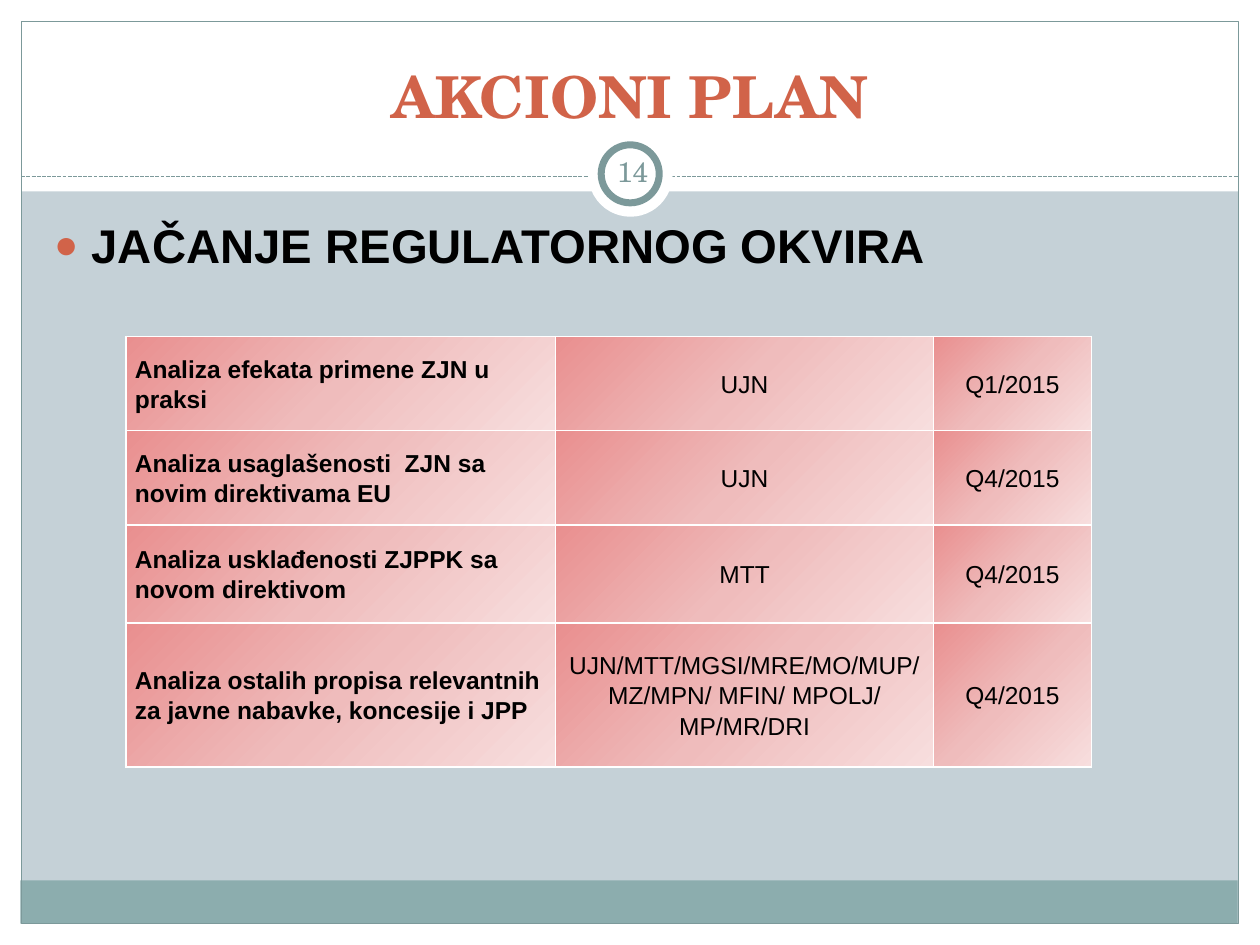
"""Build the action plan slide with its table of regulatory analyses."""
from dataclasses import dataclass

from lxml.etree import SubElement
from pptx import Presentation
from pptx.dml.color import RGBColor
from pptx.enum.dml import MSO_LINE
from pptx.enum.shapes import MSO_CONNECTOR as Connector, MSO_SHAPE as Shape
from pptx.enum.text import MSO_ANCHOR as Anchor, MSO_AUTO_SIZE as AutoSize, PP_ALIGN as Align
from pptx.oxml.ns import qn
from pptx.util import Cm, Pt

WIDTH, HEIGHT, MARGIN = 25.4, 19.05, 0.43
WHITE, BLACK, SLATE, RUST = "FFFFFF", "000000", "7C999A", "D16349"
SERIF, SANS = "TeX Gyre Schola", "Arial"
GRADIENT = ((0, "E98F8F"), (50, "EFBCBC"), (100, "F7DEDE"))
COLUMNS = (8.66, 7.62, 3.18)
ROW_HEIGHTS = (1.9, 1.9, 1.98, 2.9)


@dataclass
class Panel:
    left: float
    top: float
    width: float
    height: float
    fill: str = ""
    line: str = ""
    weight: float = 0.75
    kind: Shape = Shape.RECTANGLE


@dataclass
class Task:
    name: str
    owner: str
    deadline: str


FRAME_PANELS = (
    Panel(0, HEIGHT - MARGIN, WIDTH, MARGIN, WHITE),
    Panel(0, 0, WIDTH, 3.86, WHITE),
    Panel(0, 0, MARGIN, HEIGHT, WHITE),
    Panel(WIDTH - MARGIN, 0, MARGIN, HEIGHT, WHITE),
    Panel(0.41, 17.75, 24.54, 0.87, "8CADAE"),
    Panel(MARGIN, MARGIN, WIDTH - 2 * MARGIN, HEIGHT - 2 * MARGIN, line=SLATE),
)
BADGE_PANELS = (
    Panel(11.86, 2.67, 1.7, 1.7, WHITE, kind=Shape.OVAL),
    Panel(12.12, 2.92, 1.17, 1.17, WHITE, SLATE, 4, Shape.OVAL),
)
TASKS = (
    Task("Analiza efekata primene ZJN u praksi", "UJN", "Q1/2015"),
    Task("Analiza usaglašenosti  ZJN sa novim direktivama EU", "UJN", "Q4/2015"),
    Task("Analiza usklađenosti ZJPPK sa novom direktivom", "MTT", "Q4/2015"),
    Task("Analiza ostalih propisa relevantnih za javne nabavke, koncesije i JPP",
         "UJN/MTT/MGSI/MRE/MO/MUP/ MZ/MPN/ MFIN/ MPOLJ/ MP/MR/DRI", "Q4/2015"),
)


def color(value: str) -> RGBColor:
    """Turn a hex string into a colour."""
    return RGBColor.from_string(value)


def draw_panel(page, panel: Panel) -> None:
    """Draw one filled or outlined shape."""
    box = page.shapes.add_shape(panel.kind, Cm(panel.left), Cm(panel.top),
                                Cm(panel.width), Cm(panel.height))
    box.shadow.inherit = False
    if panel.fill:
        box.fill.solid()
        box.fill.fore_color.rgb = color(panel.fill)
    else:
        box.fill.background()
    if panel.line:
        box.line.color.rgb = color(panel.line)
        box.line.width = Pt(panel.weight)
    else:
        box.line.fill.background()


def draw_divider(page) -> None:
    """Draw the dashed line under the title."""
    divider = page.shapes.add_connector(Connector.STRAIGHT, Cm(MARGIN), Cm(3.56),
                                        Cm(WIDTH - MARGIN), Cm(3.56))
    divider.line.color.rgb = color(SLATE)
    divider.line.width = Pt(0.75)
    divider.line.dash_style = MSO_LINE.SQUARE_DOT
    SubElement(divider._element.spPr, qn("a:effectLst"))


def write(frame, text: str, size: float, font: str, ink: str, bold: bool = False,
          align: Align = Align.LEFT):
    """Set a frame's only paragraph and format its run."""
    frame.text = text
    para = frame.paragraphs[0]
    para.alignment = align
    span = para.runs[0]
    span.font.size, span.font.name, span.font.bold = Pt(size), font, bold
    span.font.color.rgb = color(ink)
    return para


def add_title(page) -> None:
    """Place the title in front of the white header."""
    title = page.shapes.title
    title.left, title.top, title.width, title.height = Cm(0.84), Cm(0.64), Cm(23.7), Cm(2.11)
    frame = title.text_frame
    frame.auto_size, frame.vertical_anchor = AutoSize.NONE, Anchor.BOTTOM
    write(frame, "AKCIONI PLAN", 33, SERIF, RUST, True, Align.CENTER)
    page.shapes._spTree.append(title._element)


def add_page_number(page) -> None:
    """Write the page number inside the badge."""
    frame = page.shapes.add_textbox(Cm(12.12), Cm(2.84), Cm(1.27), Cm(1.22)).text_frame
    frame.word_wrap, frame.vertical_anchor = True, Anchor.MIDDLE
    frame.margin_left = frame.margin_right = frame.margin_top = frame.margin_bottom = Cm(0.13)
    write(frame, "14", 16, SERIF, SLATE, align=Align.CENTER)


def add_heading(page) -> None:
    """Write the bulleted heading above the table."""
    frame = page.shapes.add_textbox(Cm(0.84), Cm(4.24), Cm(23.62), Cm(12.7)).text_frame
    frame.word_wrap = True
    para = write(frame, "JAČANJE REGULATORNOG OKVIRA", 27, SANS, BLACK, True)
    para.space_before = Pt(5.4)
    properties = para._p.get_or_add_pPr()
    properties.set("marL", str(Cm(0.76)))
    properties.set("indent", str(-Cm(0.76)))
    SubElement(SubElement(properties, qn("a:buClr")), qn("a:srgbClr"), val=RUST)
    SubElement(properties, qn("a:buSzPct"), val="85000")
    SubElement(properties, qn("a:buFont"), typeface=SANS)
    SubElement(properties, qn("a:buChar"), char="●")


def paint_cell(cell) -> None:
    """Give a cell white borders and a diagonal gradient."""
    properties = cell._tc.get_or_add_tcPr()
    for side in ("lnL", "lnR", "lnT", "lnB"):
        border = SubElement(properties, qn(f"a:{side}"), w=str(Pt(1)))
        SubElement(SubElement(border, qn("a:solidFill")), qn("a:srgbClr"), val=WHITE)
    gradient = SubElement(properties, qn("a:gradFill"), rotWithShape="1")
    stops = SubElement(gradient, qn("a:gsLst"))
    for position, shade in GRADIENT:
        stop = SubElement(stops, qn("a:gs"), pos=str(position * 1000))
        SubElement(stop, qn("a:srgbClr"), val=shade)
    SubElement(gradient, qn("a:lin"), ang=str(45 * 60000), scaled="0")


def fill_cell(cell, text: str, is_name: bool) -> None:
    """Write and paint one table cell."""
    cell.vertical_anchor = Anchor.MIDDLE
    cell.margin_left = cell.margin_right = Cm(0.18)
    cell.margin_top = cell.margin_bottom = 0
    para = write(cell.text_frame, text, 14, SANS, BLACK, is_name,
                 Align.LEFT if is_name else Align.CENTER)
    para.line_spacing = 1.1
    para.space_before = para.space_after = Pt(2.9)
    paint_cell(cell)


def add_task_table(page) -> None:
    """Add the table of tasks, owners and deadlines."""
    table = page.shapes.add_table(len(TASKS), len(COLUMNS), Cm(2.54), Cm(6.78),
                                  Cm(sum(COLUMNS)), Cm(sum(ROW_HEIGHTS))).table
    table.first_row = table.horz_banding = False
    for column, width in zip(table.columns, COLUMNS):
        column.width = Cm(width)
    for row, height, task in zip(table.rows, ROW_HEIGHTS, TASKS):
        row.height = Cm(height)
        for index, text in enumerate((task.name, task.owner, task.deadline)):
            fill_cell(row.cells[index], text, index == 0)


def main() -> None:
    """Build and save the deck."""
    deck = Presentation()
    deck.slide_width, deck.slide_height = Cm(WIDTH), Cm(HEIGHT)
    page = deck.slides.add_slide(deck.slide_layouts[5])
    page.background.fill.solid()
    page.background.fill.fore_color.rgb = color("C5D1D7")
    for panel in FRAME_PANELS:
        draw_panel(page, panel)
    draw_divider(page)
    for panel in BADGE_PANELS:
        draw_panel(page, panel)
    add_title(page)
    add_page_number(page)
    add_heading(page)
    add_task_table(page)
    deck.save("out.pptx")


if __name__ == "__main__":
    main()
